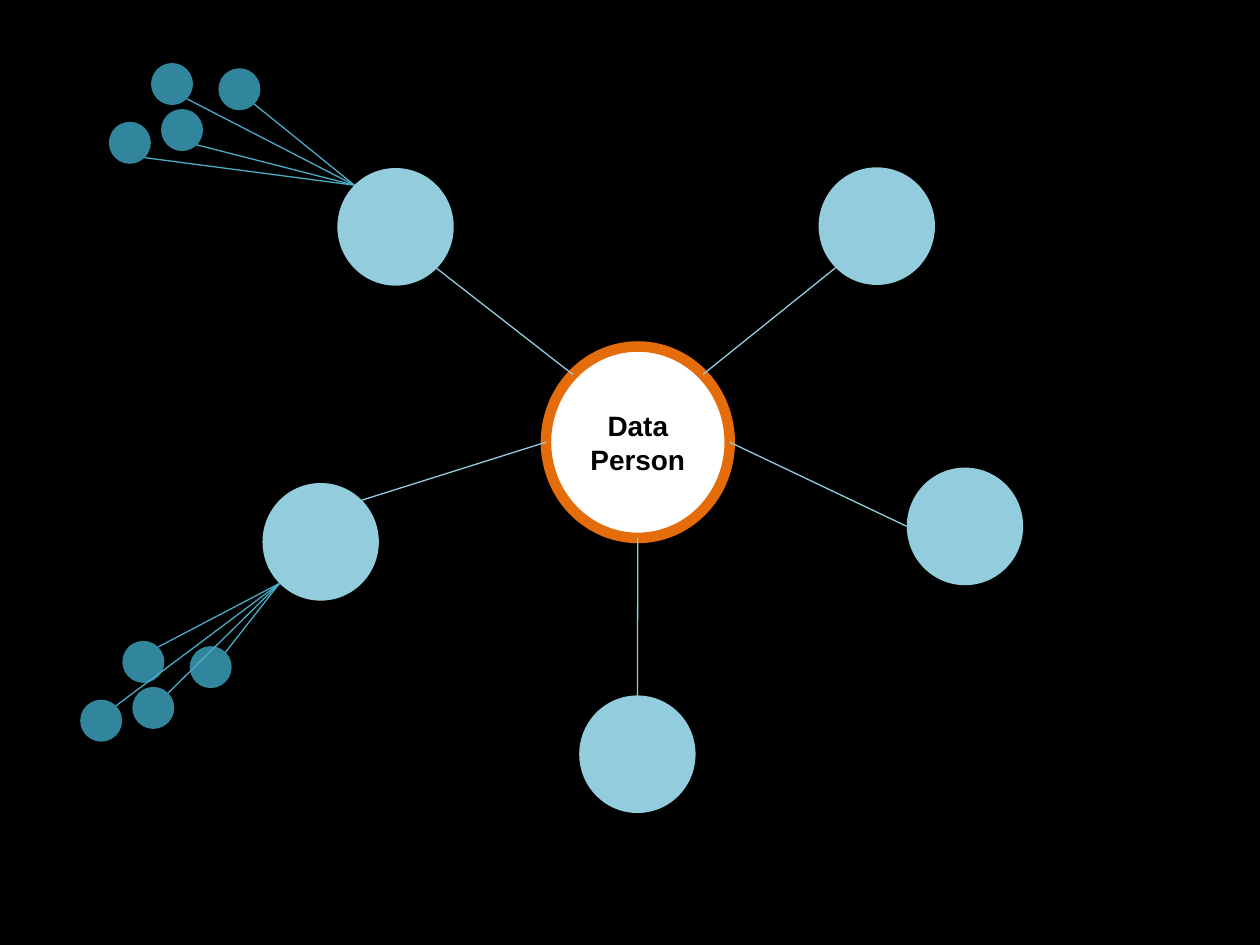
import math
from dataclasses import dataclass

import pptx
import pptx.dml.color
import pptx.enum.shapes
import pptx.enum.text
import pptx.oxml
import pptx.oxml.ns
import pptx.util
from pptx.util import Pt


@dataclass(frozen=True)
class Theme:
    background: str = "000000"
    hub_fill: str = "FFFFFF"
    hub_ring: str = "E46C0A"
    hub_text: str = "000000"
    node: str = "93CDDD"
    satellite: str = "31859C"
    satellite_line: str = "4BACC6"
    font: str = "Arial"
    text_size: float = 16
    ring_width: float = 6
    line_width: float = 0.75


@dataclass(frozen=True)
class Box:
    left: float
    top: float
    width: float
    height: float

    def site(self, horizontal, vertical):
        """Point on the ellipse in a direction given by -1, 0 or 1 per axis."""
        reach = math.hypot(horizontal, vertical)
        return (self.left + self.width / 2 * (1 + horizontal / reach),
                self.top + self.height / 2 * (1 + vertical / reach))


THEME = Theme()
NODE_SIZE = (66.5, 67.2)
SATELLITE_SIZE = 24
SATELLITE_OFFSETS = [(24.1, 0), (29.8, 26.3), (62.6, 3), (0, 33.6)]

HUB = Box(312, 198, 105, 109.4)
UPPER_RIGHT, RIGHT, BOTTOM, LOWER_LEFT, UPPER_LEFT = [
    Box(left, top, *NODE_SIZE)
    for left, top in [(467.8, 95.6), (518.2, 267.2), (331, 397.4),
                      (150, 276), (192.8, 96)]
]
# Node, direction on the node, direction on the hub
SPOKES = [
    (UPPER_RIGHT, (-1, 1), (1, -1)),
    (RIGHT, (-1, 0), (1, 0)),
    (BOTTOM, (0, -1), (0, 1)),
    (LOWER_LEFT, (1, -1), (-1, 0)),
    (UPPER_LEFT, (1, 1), (-1, -1)),
]


def rgb(color):
    return pptx.dml.color.RGBColor.from_string(color)


def add_circle(slide, box, fill, ring=None):
    shape = slide.shapes.add_shape(
        pptx.enum.shapes.MSO_SHAPE.OVAL,
        Pt(box.left), Pt(box.top), Pt(box.width), Pt(box.height))
    shape.shadow.inherit = False
    shape.fill.solid()
    shape.fill.fore_color.rgb = rgb(fill)
    if ring:
        shape.line.color.rgb = rgb(ring)
        shape.line.width = Pt(THEME.ring_width)
    else:
        shape.line.fill.background()
    return shape


def add_line(slide, start, end, color):
    points = [Pt(value) for value in (*start, *end)]
    connector = slide.shapes.add_connector(
        pptx.enum.shapes.MSO_CONNECTOR.STRAIGHT, *points)
    connector.line.color.rgb = rgb(color)
    connector.line.width = Pt(THEME.line_width)
    properties = connector._element.spPr
    properties.append(pptx.oxml.parse_xml(
        f"<a:effectLst {pptx.oxml.ns.nsdecls('a')}/>"))


def write_text(shape, text, *, size, color, bold=False):
    frame = shape.text_frame
    frame.word_wrap = True
    frame.vertical_anchor = pptx.enum.text.MSO_ANCHOR.MIDDLE
    frame.text = text
    for paragraph in frame.paragraphs:
        paragraph.alignment = pptx.enum.text.PP_ALIGN.CENTER
        for run in paragraph.runs:
            run.font.name = THEME.font
            run.font.size = Pt(size)
            run.font.bold = bold
            run.font.color.rgb = rgb(color)


def add_hub(slide, box):
    hub = add_circle(slide, box, THEME.hub_fill, THEME.hub_ring)
    write_text(hub, "Data\nPerson", size=THEME.text_size,
               color=THEME.hub_text, bold=True)


def add_spokes(slide, hub, spokes):
    for node, _, _ in spokes:
        add_circle(slide, node, THEME.node)
    for node, node_side, hub_side in spokes:
        add_line(slide, node.site(*node_side), hub.site(*hub_side), THEME.node)


def add_cluster(slide, left, top, node, node_side, satellite_side):
    satellites = [Box(left + x, top + y, SATELLITE_SIZE, SATELLITE_SIZE)
                  for x, y in SATELLITE_OFFSETS]
    for satellite in satellites:
        add_circle(slide, satellite, THEME.satellite)
    for satellite in satellites:
        add_line(slide, node.site(*node_side), satellite.site(*satellite_side),
                 THEME.satellite_line)


def main():
    presentation = pptx.Presentation()
    presentation.slide_width, presentation.slide_height = Pt(720), Pt(540)
    slide = presentation.slides.add_slide(presentation.slide_layouts[6])
    slide.background.fill.solid()
    slide.background.fill.fore_color.rgb = rgb(THEME.background)

    # Centre and the five nodes around it
    add_hub(slide, HUB)
    add_spokes(slide, HUB, SPOKES)

    # Satellites of the two left nodes
    add_cluster(slide, 62.2, 36, UPPER_LEFT, (-1, -1), (1, 1))
    add_cluster(slide, 45.8, 366.2, LOWER_LEFT, (-1, 1), (1, -1))

    presentation.save("out.pptx")


if __name__ == "__main__":
    main()
